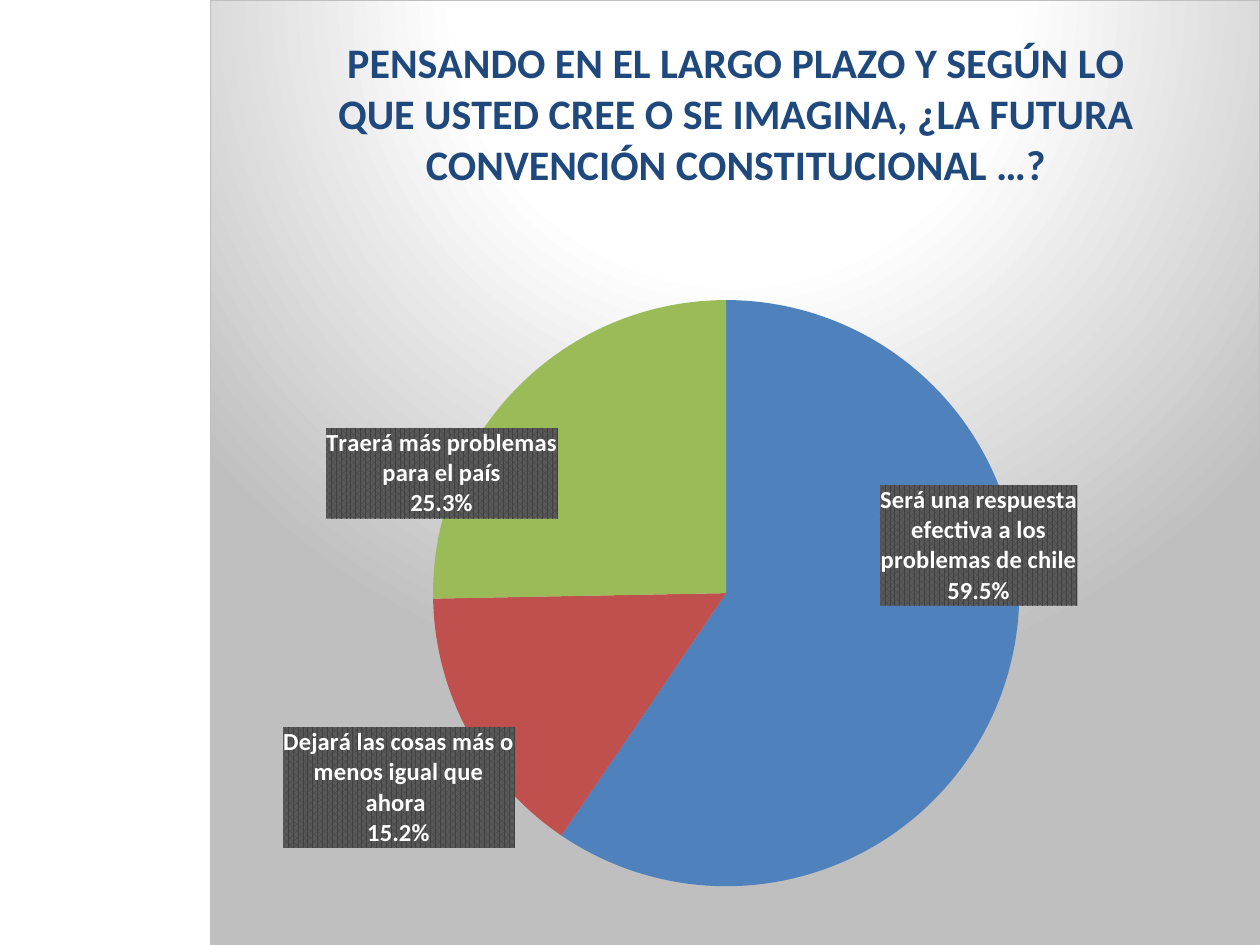
from copy import deepcopy
from dataclasses import dataclass

from pptx import Presentation
from pptx.chart.data import CategoryChartData
from pptx.dml.color import RGBColor
from pptx.enum.chart import XL_CHART_TYPE as ChartType, XL_LABEL_POSITION as LabelPosition
from pptx.oxml import parse_xml
from pptx.oxml.ns import nsdecls, qn
from pptx.util import Pt

FONT = "Calibri"
CHART_WIDTH, CHART_HEIGHT = 600, 540
LABEL_WIDTH, LABEL_HEIGHT = 115, 69
TITLE = ("PENSANDO EN EL LARGO PLAZO Y SEGÚN LO QUE USTED CREE O SE IMAGINA, "
         "¿LA FUTURA CONVENCIÓN CONSTITUCIONAL …?")


@dataclass
class Slice:
    answer: str
    percent: float
    color: str
    shift_x: float
    shift_y: float


SLICES = [
    Slice("Será una respuesta efectiva a los problemas de chile", 59.5, "4F81BD", 64.3, -52),
    Slice("Dejará las cosas más o menos igual que ahora ", 15.2, "C0504D", -113.7, 71.3),
    Slice("Traerá más problemas para el país", 25.3, "9BBB59", -102.9, -9.9),
]


def rgb(color: str) -> RGBColor:
    return RGBColor.from_string(color)


def style_font(font, size: float, color: str, bold: bool = False) -> None:
    font.name = FONT
    font.size = Pt(size)
    font.bold = bold
    font.color.rgb = rgb(color)


def write(frame, text: str, *, size: float, color: str, bold: bool) -> None:
    para = frame.paragraphs[0]
    span = para.add_run()
    span.text = text
    style_font(span.font, size, color, bold)


def shape_format(content: str):
    return parse_xml(f'<c:spPr {nsdecls("c", "a")}>{content}</c:spPr>')


def manual_layout(*modes: tuple[str, str], **lengths: float):
    totals = {"x": CHART_WIDTH, "w": CHART_WIDTH, "y": CHART_HEIGHT, "h": CHART_HEIGHT}
    shares = [(name, length / totals[name]) for name, length in lengths.items()]
    items = "".join(f'<c:{name} val="{value}"/>' for name, value in [*modes, *shares])
    return parse_xml(f'<c:layout {nsdecls("c")}><c:manualLayout>{items}</c:manualLayout></c:layout>')


def label_size():
    extension = parse_xml(
        f'<c:extLst {nsdecls("c")}><c:ext uri="{{CE6537A1-D6FC-4f65-9D91-7224C49458BB}}" '
        'xmlns:c15="http://schemas.microsoft.com/office/drawing/2012/chart">'
        '<c15:layout/></c:ext></c:extLst>')
    extension[0][0].append(manual_layout(w=LABEL_WIDTH, h=LABEL_HEIGHT)[0])
    return extension


def replace_layout(parent, layout, index: int) -> None:
    for old in parent.findall(qn("c:layout")):
        parent.remove(old)
    parent.insert(index, layout)


def format_area(chart) -> None:
    stops = "".join(
        f'<a:gs pos="{place * 1000}"><a:srgbClr val="{color}"/></a:gs>'
        for place, color in ((0, "FFFFFF"), (39, "FFFFFF"), (100, "BFBFBF")))
    chart.element.find(qn("c:chart")).addnext(shape_format(
        f'<a:gradFill><a:gsLst>{stops}</a:gsLst><a:path path="circle">'
        '<a:fillToRect l="50000" t="-80000" r="50000" b="180000"/></a:path></a:gradFill>'
        f'<a:ln w="{Pt(0.75)}"><a:solidFill><a:srgbClr val="BFBFBF"/></a:solidFill></a:ln>'))
    layout = manual_layout(("layoutTarget", "inner"), ("xMode", "edge"), ("yMode", "edge"),
                           x=127, y=171.4, w=336, h=335.4)
    replace_layout(chart.element.find(".//" + qn("c:plotArea")), layout, 0)


def add_title(chart) -> None:
    chart.has_title = True
    title = chart.chart_title
    write(title.text_frame, TITLE, size=24, color="1F497D", bold=True)
    layout = manual_layout(("xMode", "edge"), ("yMode", "edge"), x=68.6, y=14.7)
    replace_layout(title._element, layout, 1)


def format_labels(series) -> None:
    labels = series.data_labels
    style_font(labels.font, 14, "FFFFFF", True)
    labels.number_format = "0.0%"
    labels.number_format_is_linked = False
    labels.position = LabelPosition.CENTER
    labels.show_value = False
    labels.show_category_name = True
    labels.show_percentage = True
    node = labels._element
    node.find(qn("c:numFmt")).addnext(shape_format(
        '<a:pattFill prst="pct75"><a:fgClr><a:srgbClr val="404040"/></a:fgClr>'
        '<a:bgClr><a:srgbClr val="595959"/></a:bgClr></a:pattFill><a:ln><a:noFill/></a:ln>'))
    separator = parse_xml(f'<c:separator {nsdecls("c")}>\n</c:separator>')
    node.find(qn("c:showBubbleSize")).addnext(separator)
    shared = [child for child in node if child.tag != qn("c:showLeaderLines")]
    for index, part in enumerate(SLICES):
        label = parse_xml(f'<c:dLbl {nsdecls("c")}><c:idx val="{index}"/></c:dLbl>')
        label.append(manual_layout(x=part.shift_x, y=part.shift_y))
        label.extend(deepcopy(shared))
        label.append(label_size())
        node.insert(index, label)


def add_pie(page) -> None:
    data = CategoryChartData()
    data.categories = [part.answer for part in SLICES]
    data.add_series("Series 1", [part.percent for part in SLICES])
    chart = page.shapes.add_chart(
        ChartType.PIE, Pt(120), Pt(0), Pt(CHART_WIDTH), Pt(CHART_HEIGHT), data).chart
    chart.has_legend = False
    style_font(chart.font, 10, "000000")
    add_title(chart)
    format_area(chart)
    chart.plots[0].vary_by_categories = True
    series = chart.plots[0].series[0]
    for index, part in enumerate(SLICES):
        fill = series.points[index].format.fill
        fill.solid()
        fill.fore_color.rgb = rgb(part.color)
    format_labels(series)


def main() -> None:
    deck = Presentation()
    deck.slide_width, deck.slide_height = Pt(720), Pt(540)
    page = deck.slides.add_slide(deck.slide_layouts[6])
    add_pie(page)
    deck.save("out.pptx")


if __name__ == "__main__":
    main()
